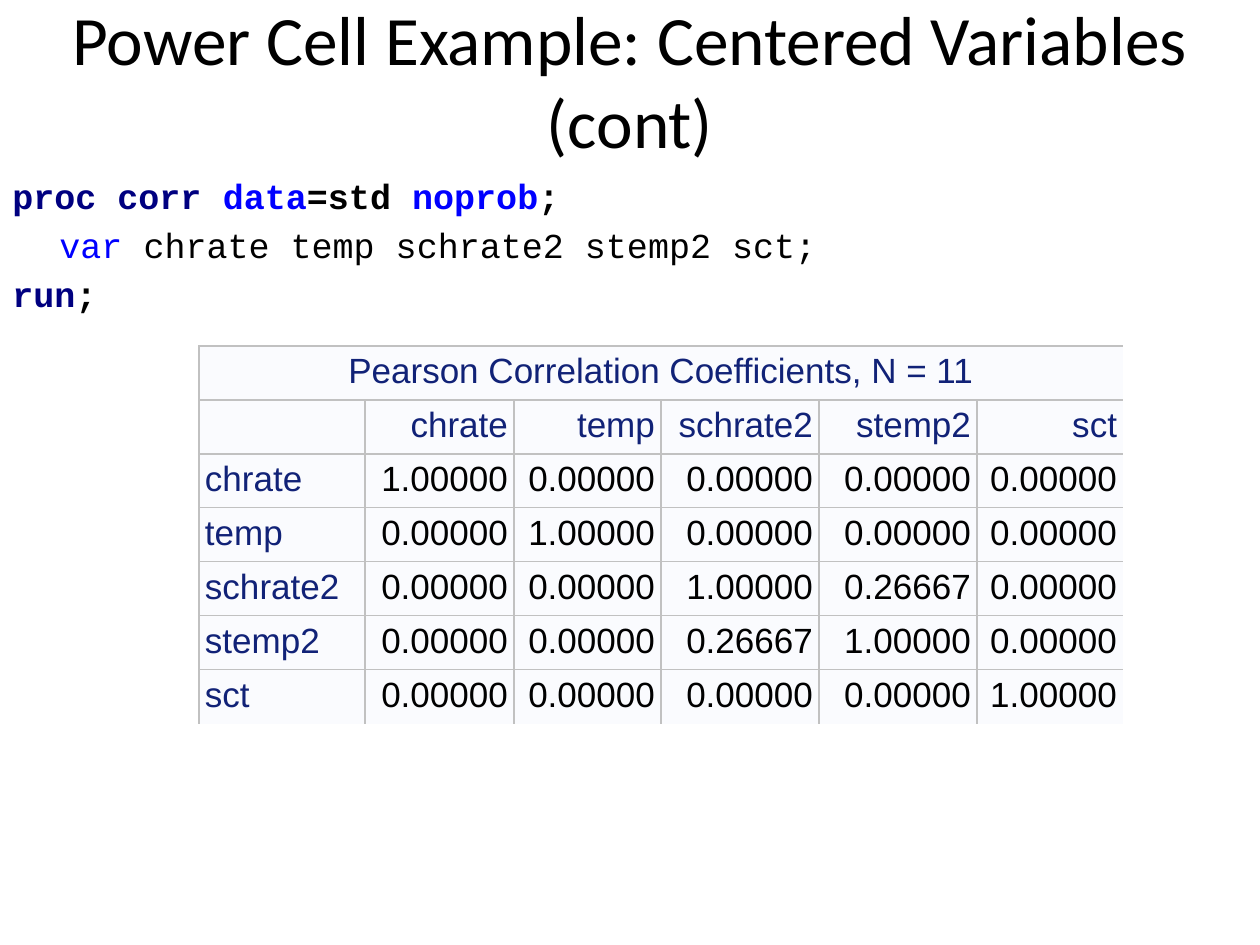
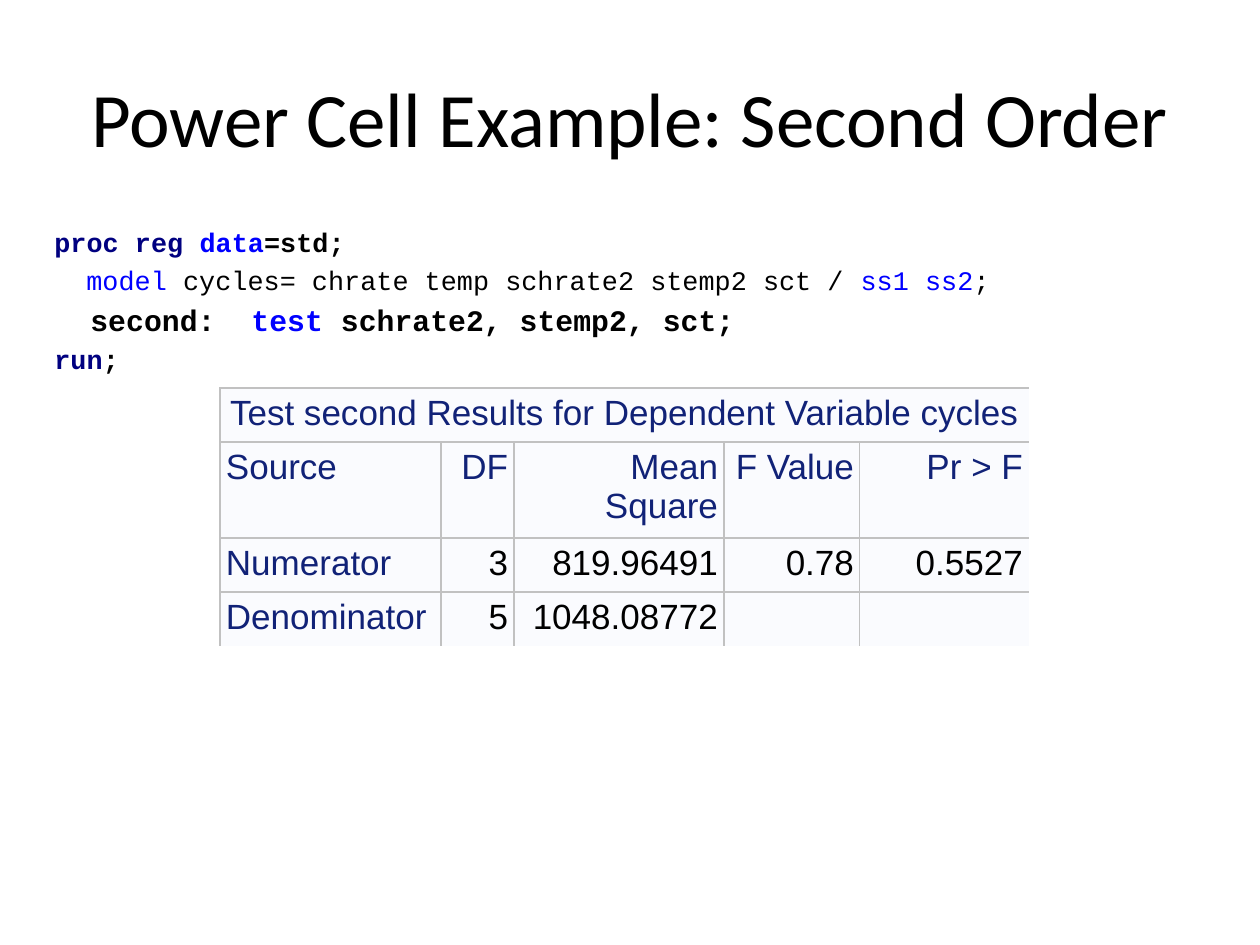
from dataclasses import dataclass
from typing import NamedTuple

from lxml.etree import SubElement
from pptx import Presentation
from pptx.dml.color import RGBColor
from pptx.enum.text import MSO_ANCHOR, PP_ALIGN
from pptx.oxml import parse_xml
from pptx.oxml.ns import nsdecls, qn
from pptx.util import Emu, Pt

EMU_PER_PX = 914400 / 126
PLAIN_TABLE_STYLE = "{2D5ABB26-0587-4C30-8999-92F81FD0307C}"


@dataclass(frozen=True)
class Theme:
    """Colours, fonts and type sizes shared by the slides."""

    ink: str = "000000"
    step: str = "000080"
    keyword: str = "0000FF"
    label: str = "112277"
    cell: str = "FAFBFE"
    rule: str = "C1C1C1"
    title_font: str = "Calibri"
    code_font: str = "Courier New"
    table_font: str = "Arial"
    title_size: float = 44
    long_title_size: float = 39.6
    code_size: float = 20
    small_code_size: float = 15.3
    test_code_size: float = 17
    table_size: float = 20
    rule_width: float = 0.75


THEME = Theme()


class Box(NamedTuple):
    """A rectangle in px."""

    left: int
    top: int
    width: int
    height: int


class CodeLine(NamedTuple):
    """One line of code: its runs as (text, colour), and its format."""

    runs: list
    size: float
    bold: bool = True
    indent: int = 0


def px(length):
    """Turn px into EMU."""
    return Emu(round(length * EMU_PER_PX))


def write(paragraph, text, *, font, size, color=THEME.ink, bold=False, align=None):
    """Add formatted text to a paragraph, with line breaks at newlines."""
    if align is not None:
        paragraph.alignment = align
    for number, part in enumerate(text.split("\n")):
        if number:
            paragraph.add_line_break()
        run = paragraph.add_run()
        run.text = part
        run.font.name = font
        run.font.size = Pt(size)
        run.font.bold = bold
        run.font.color.rgb = RGBColor.from_string(color)


def add_frame(slide, box):
    """Add a wrapping text box and return its text frame."""
    frame = slide.shapes.add_textbox(*map(px, box)).text_frame
    frame.word_wrap = True
    return frame


def add_title(slide, box, text, size):
    """Add a centred title in the given box."""
    frame = add_frame(slide, box)
    frame.vertical_anchor = MSO_ANCHOR.MIDDLE
    write(frame.paragraphs[0], text, font=THEME.title_font, size=size,
          align=PP_ALIGN.CENTER)


def add_code(slide, box, lines):
    """Add coloured code lines with spacing in proportion to their size."""
    frame = add_frame(slide, box)
    for number, line in enumerate(lines):
        paragraph = frame.add_paragraph() if number else frame.paragraphs[0]
        properties = paragraph._p.get_or_add_pPr()
        properties.set("marL", str(px(line.indent)))
        spacing = SubElement(properties, qn("a:spcBef"))
        SubElement(spacing, qn("a:spcPct")).set("val", "20000")
        for text, color in line.runs:
            write(paragraph, text, font=THEME.code_font, size=line.size,
                  color=color, bold=line.bold)


def rule_cell(cell, sides):
    """Fill a cell and rule only the named sides."""
    cell.fill.solid()
    cell.fill.fore_color.rgb = RGBColor.from_string(THEME.cell)
    properties = cell._tc.get_or_add_tcPr()
    for position, side in enumerate("LRTB"):
        paint = (f'<a:solidFill><a:srgbClr val="{THEME.rule}"/></a:solidFill>'
                 if side in sides else "<a:noFill/>")
        properties.insert(position, parse_xml(
            f'<a:ln{side} {nsdecls("a")} w="{Pt(THEME.rule_width)}">{paint}</a:ln{side}>'))


def add_results(slide, box, caption, rows, widths, heights, left_heading=False):
    """Add a results table: caption, headings, row labels and values."""
    grid = [[caption] + [""] * (len(widths) - 1), *rows]
    table = slide.shapes.add_table(len(grid), len(widths), *map(px, box)).table
    table.first_row = table.horz_banding = False
    table._tbl.tblPr.find(qn("a:tableStyleId")).text = PLAIN_TABLE_STYLE
    for column, width in zip(table.columns, widths):
        column.width = px(width)
    for row, height in zip(table.rows, heights):
        row.height = px(height)
    table.cell(0, 0).merge(table.cell(0, len(widths) - 1))

    for r, texts in enumerate(grid):
        for c, text in enumerate(texts):
            cell = table.cell(r, c)
            if cell.is_spanned:
                continue
            cell.margin_left = cell.margin_right = px(6)
            cell.margin_top = cell.margin_bottom = px(6)
            inner = r > 0 and c < len(widths) - 1
            rule_cell(cell, "LT" + "R" * inner + "B" * (r < len(grid) - 1))
            if text:
                align = (PP_ALIGN.CENTER if r == 0 else
                         PP_ALIGN.LEFT if c == 0 else PP_ALIGN.RIGHT)
                write(cell.text_frame.paragraphs[0], text, font=THEME.table_font,
                      size=THEME.table_size, align=align,
                      color=THEME.label if r < 2 or c == 0 else THEME.ink)


def build_centered(slide):
    """Build the slide on correlations of the centered variables."""
    add_title(slide, Box(0, 0, 1260, 158),
              "Power Cell Example: Centered Variables (cont)", THEME.long_title_size)
    size = THEME.code_size
    add_code(slide, Box(0, 168, 1260, 158), [
        CodeLine([("proc corr ", THEME.step), ("data", THEME.keyword),
                  ("=std ", THEME.ink), ("noprob", THEME.keyword),
                  (";", THEME.ink)], size),
        CodeLine([("var ", THEME.keyword),
                  ("chrate temp schrate2 stemp2 sct;", THEME.ink)],
                 size, bold=False, indent=47),
        CodeLine([("run", THEME.step), (";", THEME.ink)], size),
    ])

    variables = ["chrate", "temp", "schrate2", "stemp2", "sct"]
    related = {"schrate2", "stemp2"}

    def correlation(first, second):
        """Give the coefficient of two variables."""
        if first == second:
            return "1.00000"
        return "0.26667" if {first, second} == related else "0.00000"

    rows = [["", *variables]]
    rows += [[first, *(correlation(first, second) for second in variables)]
             for first in variables]
    add_results(slide, Box(199, 346, 924, 364),
                "Pearson Correlation Coefficients, N = 11", rows,
                widths=[166, 149, 147, 158, 158, 146], heights=[52] * 7)


def build_second_order(slide):
    """Build the slide on the test of the second order terms."""
    add_title(slide, Box(63, 38, 1134, 158),
              "Power Cell Example: Second Order", THEME.title_size)
    size = THEME.small_code_size
    add_code(slide, Box(42, 220, 1124, 210), [
        CodeLine([("proc reg ", THEME.step), ("data", THEME.keyword),
                  ("=std;", THEME.ink)], size),
        CodeLine([("model", THEME.keyword),
                  (" cycles= chrate temp schrate2 stemp2 sct / ", THEME.ink),
                  ("ss1 ss2", THEME.keyword), (";", THEME.ink)],
                 size, bold=False, indent=32),
        CodeLine([("second:  ", THEME.ink), ("test", THEME.keyword),
                  (" schrate2, stemp2, sct;", THEME.ink)],
                 THEME.test_code_size, indent=36),
        CodeLine([("run", THEME.step), (";", THEME.ink)], size),
    ])
    add_results(slide, Box(220, 388, 809, 247),
                "Test second Results for Dependent Variable cycles",
                [["Source", "DF", "Mean\nSquare", "F Value", "Pr > F"],
                 ["Numerator", "3", "819.96491", "0.78", "0.5527"],
                 ["Denominator", "5", "1048.08772", "", ""]],
                widths=[221, 73, 210, 136, 169], heights=[52, 91, 52, 52])


def main():
    """Build and save both slides."""
    deck = Presentation()
    deck.slide_width, deck.slide_height = px(1260), px(945)
    for build in (build_centered, build_second_order):
        build(deck.slides.add_slide(deck.slide_layouts[6]))
    deck.save("out.pptx")


if __name__ == "__main__":
    main()
